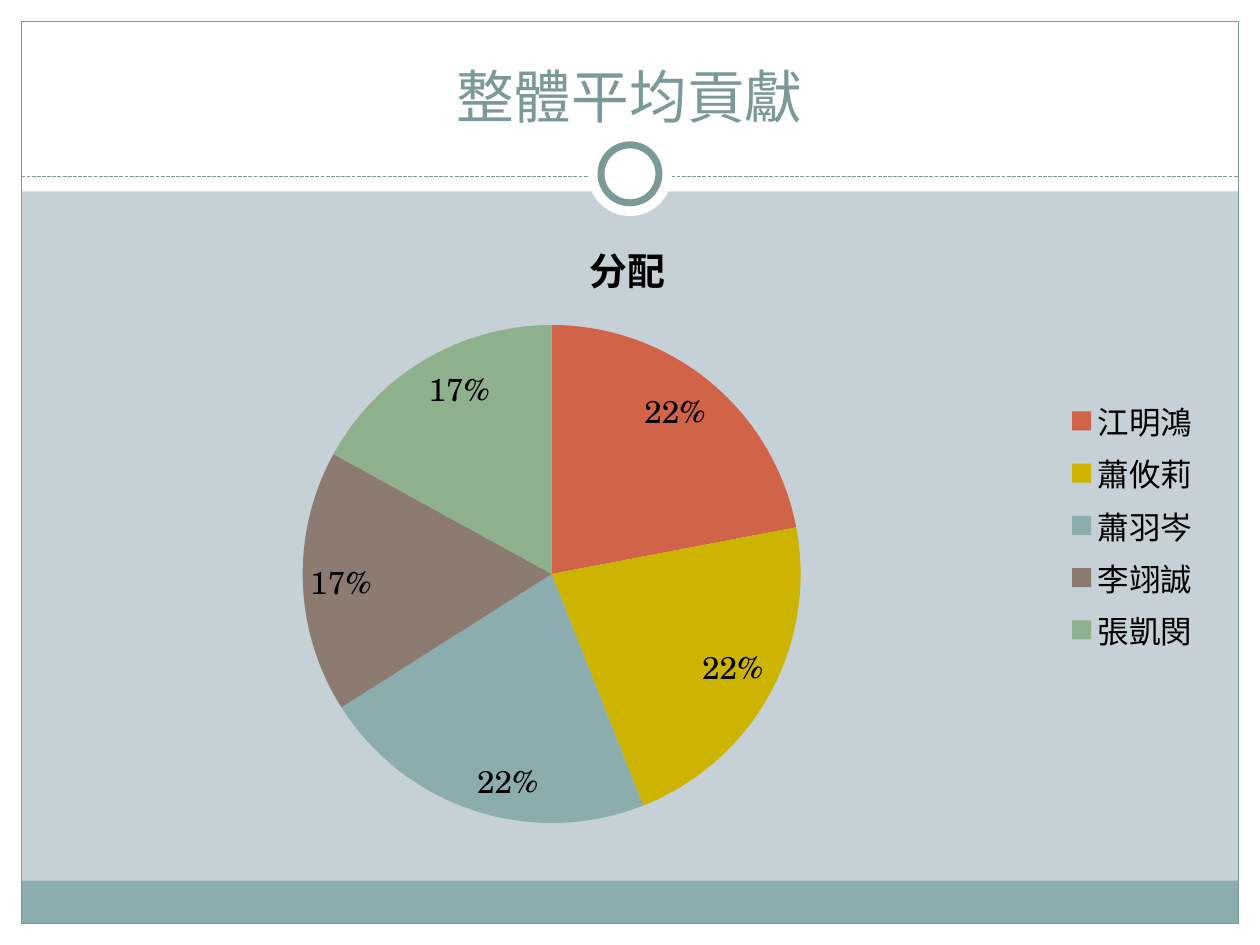
from lxml.etree import SubElement
from pptx import Presentation
from pptx.chart.data import CategoryChartData
from pptx.dml.color import RGBColor
from pptx.enum.chart import XL_CHART_TYPE, XL_LABEL_POSITION, XL_LEGEND_POSITION
from pptx.enum.dml import MSO_LINE
from pptx.enum.shapes import MSO_CONNECTOR, MSO_SHAPE
from pptx.enum.text import MSO_ANCHOR, PP_ALIGN
from pptx.oxml.ns import qn
from pptx.util import Inches, Pt

WHITE, TEAL, DARK_TEAL = "FFFFFF", "8CADAE", "7C999A"
LATIN_FONT, CHINESE_FONT = "TeX Gyre Schola", "Noto Sans CJK SC"
WIDTH, HEIGHT, MARGIN = 10, 7.5, 0.17
INNER_WIDTH, INNER_HEIGHT = WIDTH - 2 * MARGIN, HEIGHT - 2 * MARGIN
HEADER_HEIGHT, FOOTER_HEIGHT, RULE_TOP = 1.52, 0.34, 1.4


def color(hex_string):
    return RGBColor.from_string(hex_string)


def add_box(kind, left, top, width, height, fill=None, line=None, line_width=0.75):
    box = slide.shapes.add_shape(
        kind, Inches(left), Inches(top), Inches(width), Inches(height))
    box.shadow.inherit = False
    if fill:
        box.fill.solid()
        box.fill.fore_color.rgb = color(fill)
    else:
        box.fill.background()
    if line:
        box.line.color.rgb = color(line)
        box.line.width = Pt(line_width)
    else:
        box.line.fill.background()


deck = Presentation()
deck.slide_width, deck.slide_height = Inches(WIDTH), Inches(HEIGHT)
slide = deck.slides.add_slide(deck.slide_layouts[5])
slide.background.fill.solid()
slide.background.fill.fore_color.rgb = color("C5D1D7")

# White margins and header, footer band, frame
for band in [
    (0, HEIGHT - MARGIN, WIDTH, MARGIN),
    (0, 0, WIDTH, HEADER_HEIGHT),
    (0, 0, MARGIN, HEIGHT),
    (WIDTH - MARGIN, 0, MARGIN, HEIGHT),
]:
    add_box(MSO_SHAPE.RECTANGLE, *band, fill=WHITE)
add_box(MSO_SHAPE.RECTANGLE, MARGIN, HEIGHT - MARGIN - FOOTER_HEIGHT,
        INNER_WIDTH, FOOTER_HEIGHT, fill=TEAL)
add_box(MSO_SHAPE.RECTANGLE, MARGIN, MARGIN, INNER_WIDTH, INNER_HEIGHT, line=DARK_TEAL)

rule = slide.shapes.add_connector(
    MSO_CONNECTOR.STRAIGHT, Inches(MARGIN), Inches(RULE_TOP),
    Inches(WIDTH - MARGIN), Inches(RULE_TOP))
rule.line.color.rgb = color(DARK_TEAL)
rule.line.width = Pt(0.75)
rule.line.dash_style = MSO_LINE.SQUARE_DOT
SubElement(rule.element.spPr, qn("a:effectLst"))

# Ring on the rule
ring_middle = 1.38
for diameter, outline in [(0.67, None), (0.46, DARK_TEAL)]:
    add_box(MSO_SHAPE.OVAL, (WIDTH - diameter) / 2, ring_middle - diameter / 2,
            diameter, diameter, fill=WHITE, line=outline, line_width=4)

# Title, brought in front of the bands
title = slide.shapes.title
slide.shapes.element.append(title.element)
title.left, title.top = Inches(0.33), Inches(0.25)
title.width, title.height = Inches(9.33), Inches(0.83)
title.text_frame.text = "整體平均貢獻"
title.text_frame.vertical_anchor = MSO_ANCHOR.BOTTOM
para = title.text_frame.paragraphs[0]
para.alignment = PP_ALIGN.CENTER
span = para.runs[0]
span.font.size = Pt(33)
span.font.name = CHINESE_FONT
span.font.color.rgb = color(DARK_TEAL)
SubElement(span.font._element, qn("a:ea"), typeface=CHINESE_FONT)

# Contribution pie
shares = {"江明鴻": 22, "蕭攸莉": 22, "蕭羽岑": 22, "李翊誠": 17, "張凱閔": 17}
data = CategoryChartData()
data.categories = list(shares)
data.add_series("分配", list(shares.values()))
chart = slide.shapes.add_chart(
    XL_CHART_TYPE.PIE, Inches(0.33), Inches(1.67), Inches(9.3), Inches(5), data).chart
chart.font.size = Pt(18)
chart.font.name = LATIN_FONT
chart.font.color.rgb = color("000000")
SubElement(chart.font._element, qn("a:ea"), typeface=CHINESE_FONT)

chart.has_title = True
chart.chart_title.text_frame.text = "分配"
heading = chart.chart_title.text_frame.paragraphs[0]
heading.font.size = Pt(21.6)
heading.font.bold = True
chart.has_legend = True
chart.legend.position = XL_LEGEND_POSITION.RIGHT
chart.legend.include_in_layout = False

plot = chart.plots[0]
plot.vary_by_categories = True
for index, fill in enumerate(["D16349", "CCB400", TEAL, "8C7B70", "8FB08C"]):
    slice_fill = plot.series[0].points[index].format.fill
    slice_fill.solid()
    slice_fill.fore_color.rgb = color(fill)
plot.has_data_labels = True
labels = plot.data_labels
labels.show_percentage = True
labels.show_value = False
labels.number_format = "0%"
labels.number_format_is_linked = False
labels.position = XL_LABEL_POSITION.INSIDE_END

deck.save("out.pptx")
